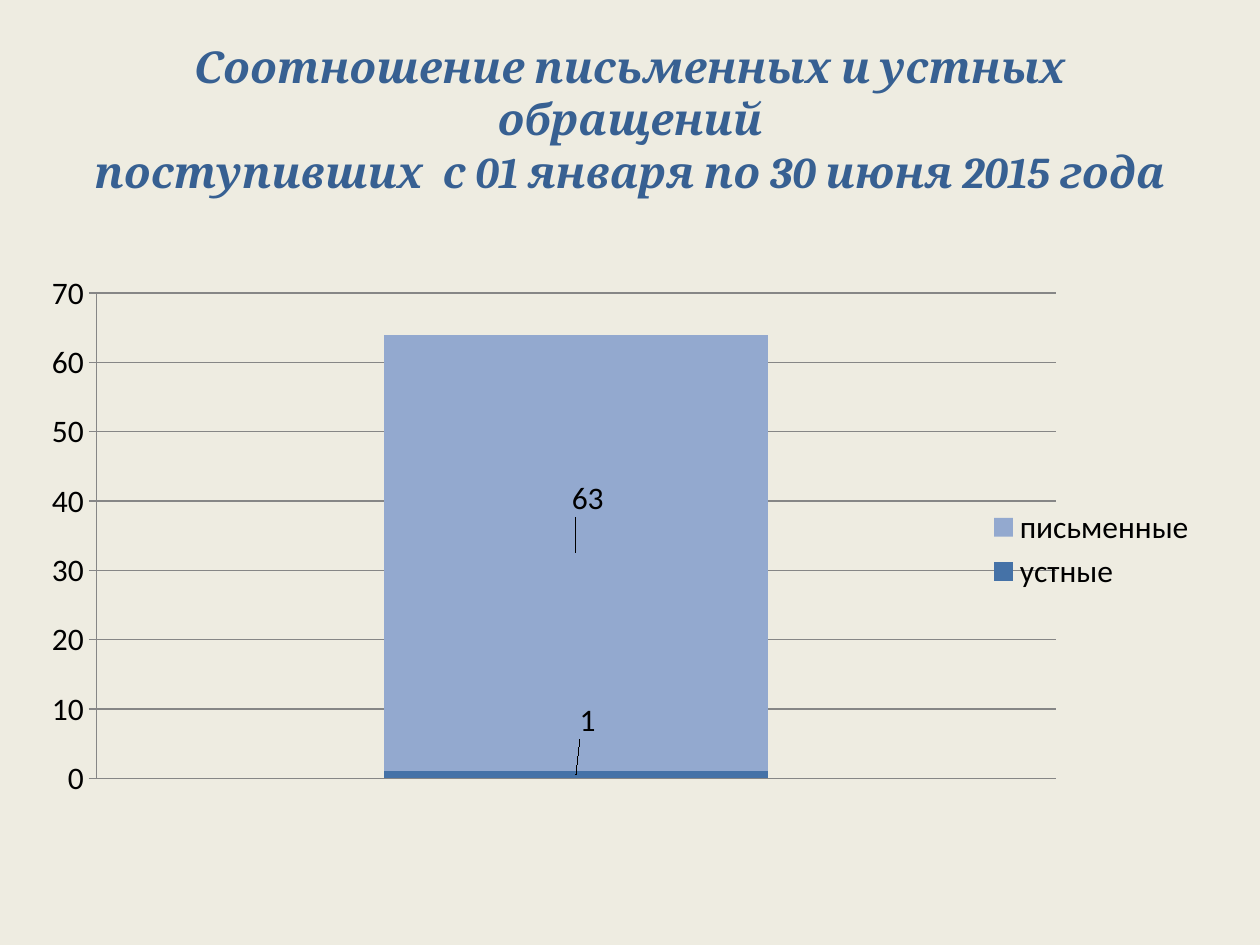
from lxml import etree
from pptx import Presentation, util as u
from pptx.chart.data import CategoryChartData
from pptx.dml.color import RGBColor
from pptx.enum import chart as ch, text
from pptx.oxml import ns


def rgb(value):
    return RGBColor.from_string(value)


def layout(**values):
    node = etree.Element(ns.qn("c:layout"))
    manual = etree.SubElement(node, ns.qn("c:manualLayout"))
    for name, value in values.items():
        etree.SubElement(manual, ns.qn("c:" + name)).set("val", str(value))
    return node


class Deck:
    """Holds the style and the current slide; places elements by shares of the slide."""

    PAPER, TITLE, INK, GRID = "EEECE1", "376092", "000000", "868686"
    HEAD_FONT, BODY_FONT = "Cambria", "Calibri"

    def __init__(self, width, height):
        self.prs = Presentation()
        self.prs.slide_width, self.prs.slide_height = u.Inches(width), u.Inches(height)
        self.s = self.prs.slides.add_slide(self.prs.slide_layouts[5])
        fill = self.s.background.fill
        fill.solid()
        fill.fore_color.rgb = rgb(self.PAPER)

    def box(self, *shares):
        w, h = self.prs.slide_width, self.prs.slide_height
        return [int(share * side) for share, side in zip(shares, (w, h, w, h))]

    def font(self, f, name, size, color):
        f.name, f.size, f.color.rgb = name, u.Pt(size), rgb(color)

    def title(self, wording, *shares):
        sp = self.s.shapes.title
        sp.left, sp.top, sp.width, sp.height = self.box(*shares)
        tf = sp.text_frame
        tf.text, tf.word_wrap = wording, True
        tf.auto_size = text.MSO_AUTO_SIZE.NONE
        tf.vertical_anchor = text.MSO_ANCHOR.MIDDLE
        p = tf.paragraphs[0]
        p.alignment = text.PP_ALIGN.CENTER
        self.font(p.font, self.HEAD_FONT, 25, self.TITLE)
        p.font.bold = p.font.italic = True

    def stacked_chart(self, category, series, *shares):
        data = CategoryChartData()
        data.categories = [category]
        for name, value, *_ in series:
            data.add_series(name, [value])
        kind = ch.XL_CHART_TYPE.COLUMN_STACKED
        chart = self.s.shapes.add_chart(kind, *self.box(*shares), data).chart
        self.font(chart.font, self.BODY_FONT, 18, self.INK)
        chart.has_title = False
        chart.has_legend = True
        chart.legend.position = ch.XL_LEGEND_POSITION.RIGHT
        chart.legend.include_in_layout = False
        chart.category_axis.visible = False
        axis = chart.value_axis
        axis.minimum_scale, axis.maximum_scale, axis.major_unit = 0, 70, 10
        axis.major_tick_mark = ch.XL_TICK_MARK.OUTSIDE
        for line in (axis.format.line, axis.major_gridlines.format.line):
            line.color.rgb, line.width = rgb(self.GRID), u.Pt(0.75)
        plot = chart.plots[0]
        plot.gap_width, plot.overlap, plot.vary_by_categories = 150, 100, False
        for ser, (_, _, color, dx, dy) in zip(plot.series, series):
            ser.format.fill.solid()
            ser.format.fill.fore_color.rgb = rgb(color)
            self.font(ser.points[0].data_label.font, self.BODY_FONT, 18, self.INK)
            label = ser._element.find(".//" + ns.qn("c:dLbl"))
            label.insert(1, layout(x=dx, y=dy))
        area = chart._chartSpace.chart.plotArea
        for old in area.findall(ns.qn("c:layout")):
            area.remove(old)
        area.insert(0, layout(layoutTarget="inner", xMode="edge", yMode="edge",
                              x=0.06, y=0.03, w=0.81, h=0.89))


def main():
    deck = Deck(10, 7.5)
    deck.title("Соотношение письменных и устных обращений\v"
               "поступивших  с 01 января по 30 июня 2015 года",
               0.05, 0.04, 0.9, 0.17)
    deck.stacked_chart("1", [("устные", 1, "4572A7", 0.01, -0.1),
                             ("письменные", 63, "93A9CF", 0.01, -0.1)],
                       0.02, 0.29, 0.94, 0.58)
    deck.prs.save("out.pptx")


if __name__ == "__main__":
    main()
